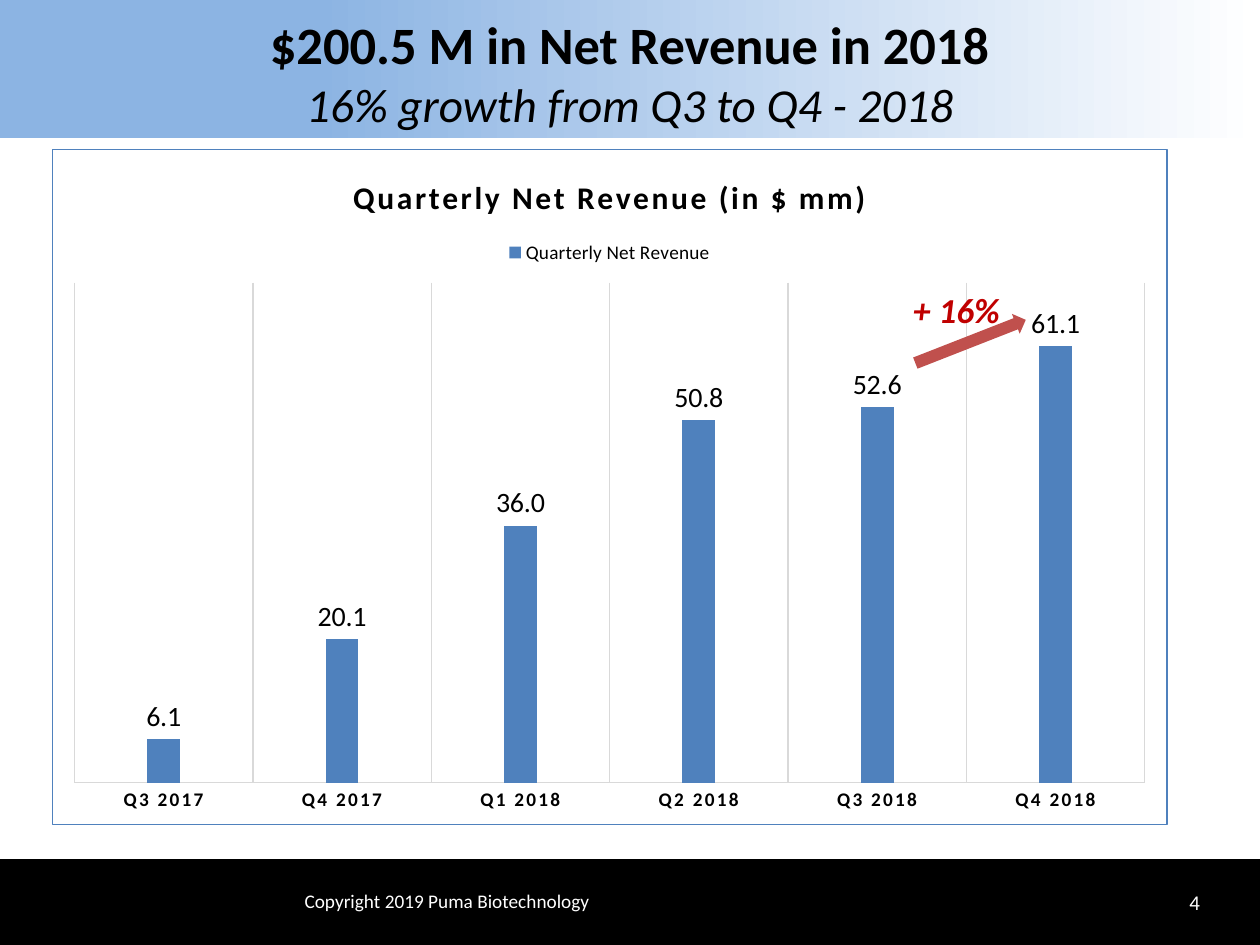
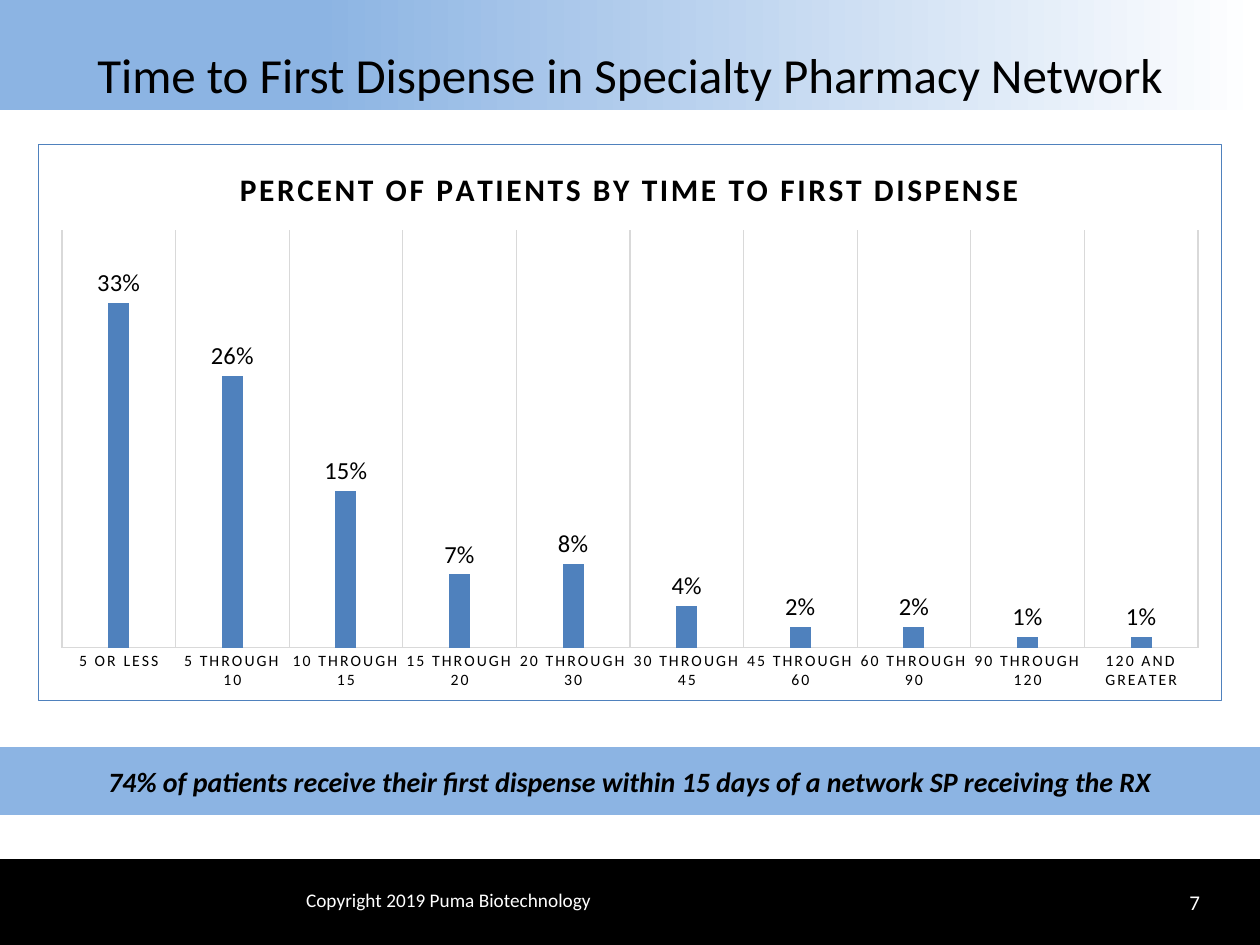
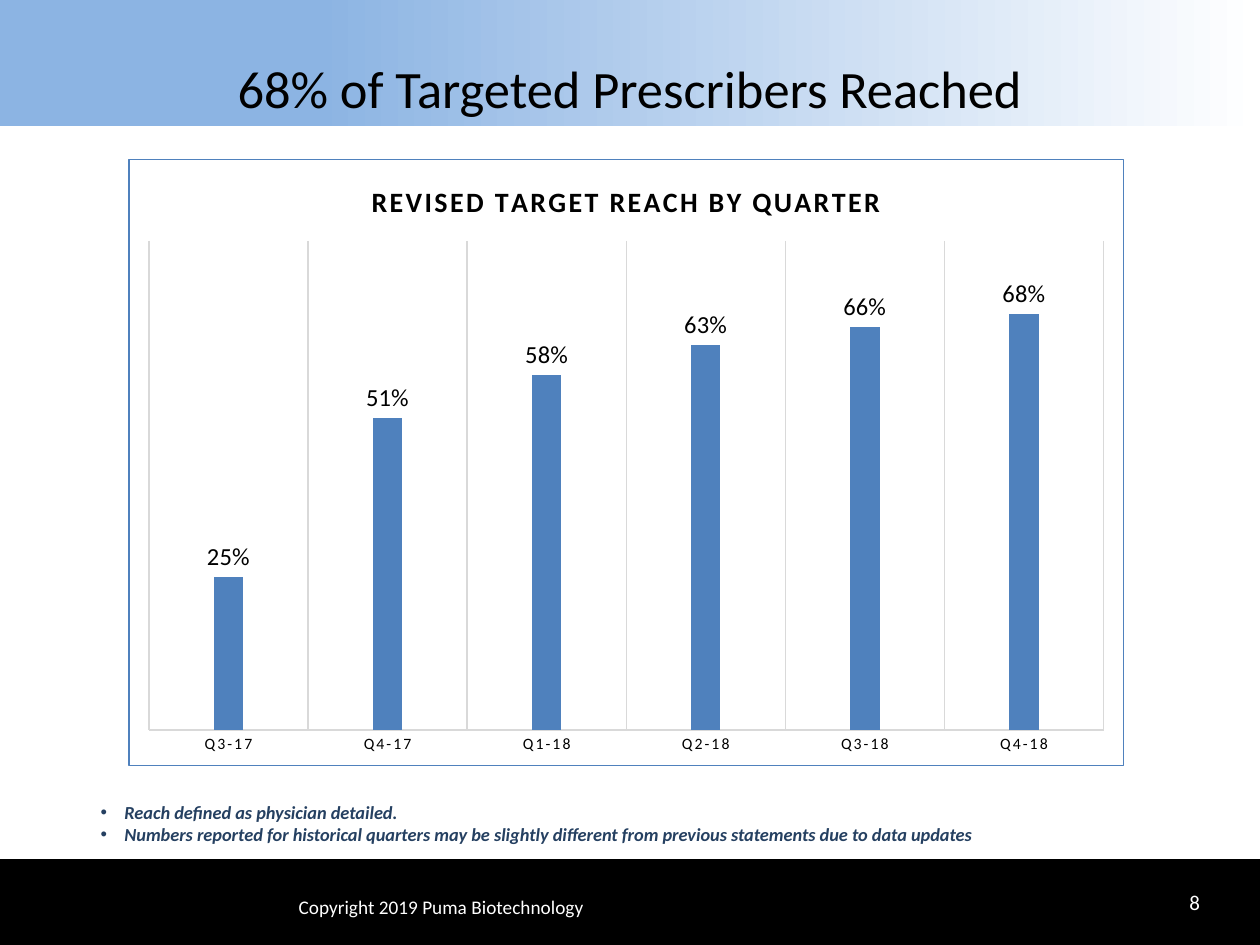
from pptx import Presentation
from pptx.chart.data import CategoryChartData
from pptx.dml.color import RGBColor
from pptx.enum.chart import XL_CHART_TYPE as ChartType
from pptx.enum.chart import XL_LABEL_POSITION as LabelPosition
from pptx.enum.chart import XL_LEGEND_POSITION as LegendPosition
from pptx.enum.chart import XL_TICK_LABEL_POSITION as TickLabels
from pptx.enum.chart import XL_TICK_MARK as TickMark
from pptx.enum.shapes import MSO_SHAPE as Shape
from pptx.enum.text import MSO_ANCHOR as Anchor
from pptx.enum.text import MSO_AUTO_SIZE as AutoSize
from pptx.enum.text import PP_ALIGN as Align
from pptx.oxml import parse_xml
from pptx.oxml.ns import nsdecls
from pptx.util import Cm, Pt

COLORS = {
    "black": "000000", "white": "FFFFFF", "sky": "8CB4E3", "bar": "4F81BD",
    "grid": "D9D9D9", "arrow": "C0504D", "growth": "C00000", "note": "254061",
}
FONT = "Calibri"
WIDTH, HEIGHT = 25.4, 19.05


def rgb(name):
    return RGBColor.from_string(COLORS[name])


class Deck:
    def __init__(self):
        self.prs = Presentation()
        self.prs.slide_width, self.prs.slide_height = Cm(WIDTH), Cm(HEIGHT)
        self.slide = None

    def style(self, font, size, color="black", bold=False, italic=False):
        font.name, font.size = FONT, Pt(size)
        font.bold, font.italic = bold, italic
        font.color.rgb = rgb(color)

    def start(self, number, copyright_left, copyright_top):
        """Add a slide with the footer band, page number and copyright line."""
        self.slide = self.prs.slides.add_slide(self.prs.slide_layouts[6])
        self.shape((0, 17.32, WIDTH, 1.73), "black")
        page = self.text((22.66, 17.68, 1.78, 1.02), [str(number)], 12, "white")
        page.vertical_anchor = Anchor.MIDDLE
        page.paragraphs[0].alignment = Align.RIGHT
        self.text((copyright_left, copyright_top, 7.54, 0.74),
                  ["Copyright 2019 Puma Biotechnology"], 11, "white")

    def shape(self, box, color, kind=Shape.RECTANGLE):
        shape = self.slide.shapes.add_shape(kind, *map(Cm, box))
        shape.shadow.inherit = False
        shape.line.fill.background()
        shape.fill.solid()
        shape.fill.fore_color.rgb = rgb(color)
        return shape

    def text(self, box, lines, size, color, wrap=True, **look):
        frame = self.slide.shapes.add_textbox(*map(Cm, box)).text_frame
        frame.word_wrap = wrap
        frame.auto_size = AutoSize.NONE
        frame.text = "\n".join(lines)
        for paragraph in frame.paragraphs:
            for run in paragraph.runs:
                self.style(run.font, size, color, **look)
        return frame

    def title(self, height, size, text):
        """Add the gradient title band and return its runs."""
        band = self.shape((0, 0, WIDTH, height), "sky")
        band.fill.gradient()
        band.fill.gradient_angle = 0
        for stop, position, color in zip(band.fill.gradient_stops, (0.25, 1), ("sky", "white")):
            stop.position = position
            stop.color.rgb = rgb(color)
        return self.centred(band, text, size, Anchor.BOTTOM, 1.27, 0.13)

    def banner(self, box, text, size):
        band = self.shape(box, "sky")
        self.centred(band, text, size, Anchor.MIDDLE, 0.33, 0.18, bold=True, italic=True)

    def centred(self, band, text, size, anchor, side, edge, **look):
        frame = band.text_frame
        frame.word_wrap = True
        frame.vertical_anchor = anchor
        frame.margin_left = frame.margin_right = Cm(side)
        frame.margin_top = frame.margin_bottom = Cm(edge)
        frame.text = text
        paragraph = frame.paragraphs[0]
        paragraph.alignment = Align.CENTER
        for run in paragraph.runs:
            self.style(run.font, size, **look)
        return paragraph.runs

    def bullets(self, box, lines, size, color):
        frame = self.text(box, lines, size, color, bold=True, italic=True)
        for paragraph in frame.paragraphs:
            properties = paragraph._p.get_or_add_pPr()
            properties.set("marL", str(Cm(0.48)))
            properties.set("indent", str(-Cm(0.48)))
            properties.append(parse_xml(f'<a:buFont {nsdecls("a")} typeface="Arial"/>'))
            properties.append(parse_xml(f'<a:buChar {nsdecls("a")} char="•"/>'))

    def columns(self, box, title, values, top, number_format, series="Series 1",
                title_size=18, axis_size=9, label_size=14, axis_bold=False, legend=False):
        data = CategoryChartData(number_format=number_format)
        data.categories = list(values)
        data.add_series(series, list(values.values()))
        chart = self.slide.shapes.add_chart(
            ChartType.COLUMN_CLUSTERED, *map(Cm, box), data).chart
        self.style(chart.font, 10)

        # Title and legend
        chart.has_title = True
        heading = chart.chart_title.text_frame
        heading.text = title
        self.style(heading.paragraphs[0].runs[0].font, title_size, bold=True)
        chart.has_legend = legend
        if legend:
            chart.legend.position = LegendPosition.TOP
            chart.legend.include_in_layout = False
            self.style(chart.legend.font, 11)

        # Axes
        scale = chart.value_axis
        scale.minimum_scale, scale.maximum_scale = 0, top
        scale.has_major_gridlines = False
        scale.visible = False
        periods = chart.category_axis
        periods.major_tick_mark = periods.minor_tick_mark = TickMark.NONE
        periods.tick_label_position = TickLabels.NEXT_TO_AXIS
        periods.has_major_gridlines = True
        for line in (periods.format.line, periods.major_gridlines.format.line):
            line.color.rgb = rgb("grid")
            line.width = Pt(0.75)
        self.style(periods.tick_labels.font, axis_size, bold=axis_bold)

        # Columns and their labels
        plot = chart.plots[0]
        plot.gap_width, plot.overlap = 444, -90
        plot.vary_by_categories = False
        fill = plot.series[0].format.fill
        fill.solid()
        fill.fore_color.rgb = rgb("bar")
        plot.has_data_labels = True
        labels = plot.data_labels
        labels.show_value = True
        labels.position = LabelPosition.OUTSIDE_END
        labels.number_format, labels.number_format_is_linked = number_format, False
        self.style(labels.font, label_size)

        # Letter spacing and border
        root = chart.element
        for query, spacing in (("c:chart/c:title//a:rPr", 150),
                               ("c:chart/c:plotArea/c:catAx/c:txPr//a:defRPr", 120)):
            root.xpath(query)[0].set("spc", str(spacing))
        root.xpath("c:txPr")[0].addprevious(parse_xml(
            f'<c:spPr {nsdecls("c", "a")}><a:noFill/><a:ln w="{Pt(0.75)}"><a:solidFill>'
            f'<a:srgbClr val="{COLORS["bar"]}"/></a:solidFill></a:ln></c:spPr>'))


def main():
    deck = Deck()

    # Net revenue
    deck.start(4, 5.89, 17.81)
    deck.columns(
        (1.04, 3, 22.5, 13.64), "Quarterly Net Revenue (in $ mm)",
        {"Q3 2017": 6.1, "Q4 2017": 20.1, "Q1 2018": 36, "Q2 2018": 50.8,
         "Q3 2018": 52.6, "Q4 2018": 61.1},
        70, "0.0", series="Quarterly Net Revenue", axis_size=11, label_size=16,
        axis_bold=True, legend=True)
    headline, growth = deck.title(
        2.79, 30, "$200.5 M in Net Revenue in 2018\v16% growth from Q3 to Q4 - 2018")
    headline.font.bold = True
    growth.font.size, growth.font.italic = Pt(27), True
    rise = deck.shape((19.35, 5.69, 0.43, 2.39), "arrow", Shape.UP_ARROW)
    rise.adjustments[0], rise.adjustments[1] = 0.56, 0.5
    rise.rotation = 68.6
    deck.text((18.16, 5.69, 2.26, 1.12), ["+ 16%"], 20, "growth",
              wrap=False, bold=True, italic=True)

    # Time to first dispense
    deck.start(7, 5.92, 17.78)
    deck.title(2.21, 28, "Time to First Dispense in Specialty Pharmacy Network")
    deck.banner((0, 15.06, WIDTH, 1.37),
                "74% of patients receive their first dispense within 15 days "
                "of a network SP receiving the RX", 16)
    deck.columns(
        (0.76, 2.9, 23.88, 11.23), "PERCENT OF PATIENTS BY TIME TO FIRST DISPENSE",
        {"5 OR LESS": 0.33, "5 THROUGH 10": 0.26, "10 THROUGH 15": 0.15,
         "15 THROUGH 20": 0.07, "20 THROUGH 30": 0.08, "30 THROUGH 45": 0.04,
         "45 THROUGH 60": 0.02, "60 THROUGH 90": 0.02, "90 THROUGH 120": 0.01,
         "120 AND GREATER": 0.01},
        0.4, "0%")

    # Prescriber reach
    deck.start(8, 5.77, 17.93)
    deck.title(2.54, 30, "68% of Targeted Prescribers Reached")
    deck.bullets((1.78, 16.03, 21.11, 1.14), [
        "Reach defined as physician detailed.",
        "Numbers reported for historical quarters may be slightly different "
        "from previous statements due to data updates",
    ], 10.5, "note")
    deck.columns(
        (2.59, 3.2, 20.07, 12.24), "REVISED TARGET REACH BY QUARTER",
        {"Q3-17": 0.25, "Q4-17": 0.51, "Q1-18": 0.58, "Q2-18": 0.63,
         "Q3-18": 0.66, "Q4-18": 0.68},
        0.8, "0%", title_size=16)

    deck.prs.save("out.pptx")


if __name__ == "__main__":
    main()
